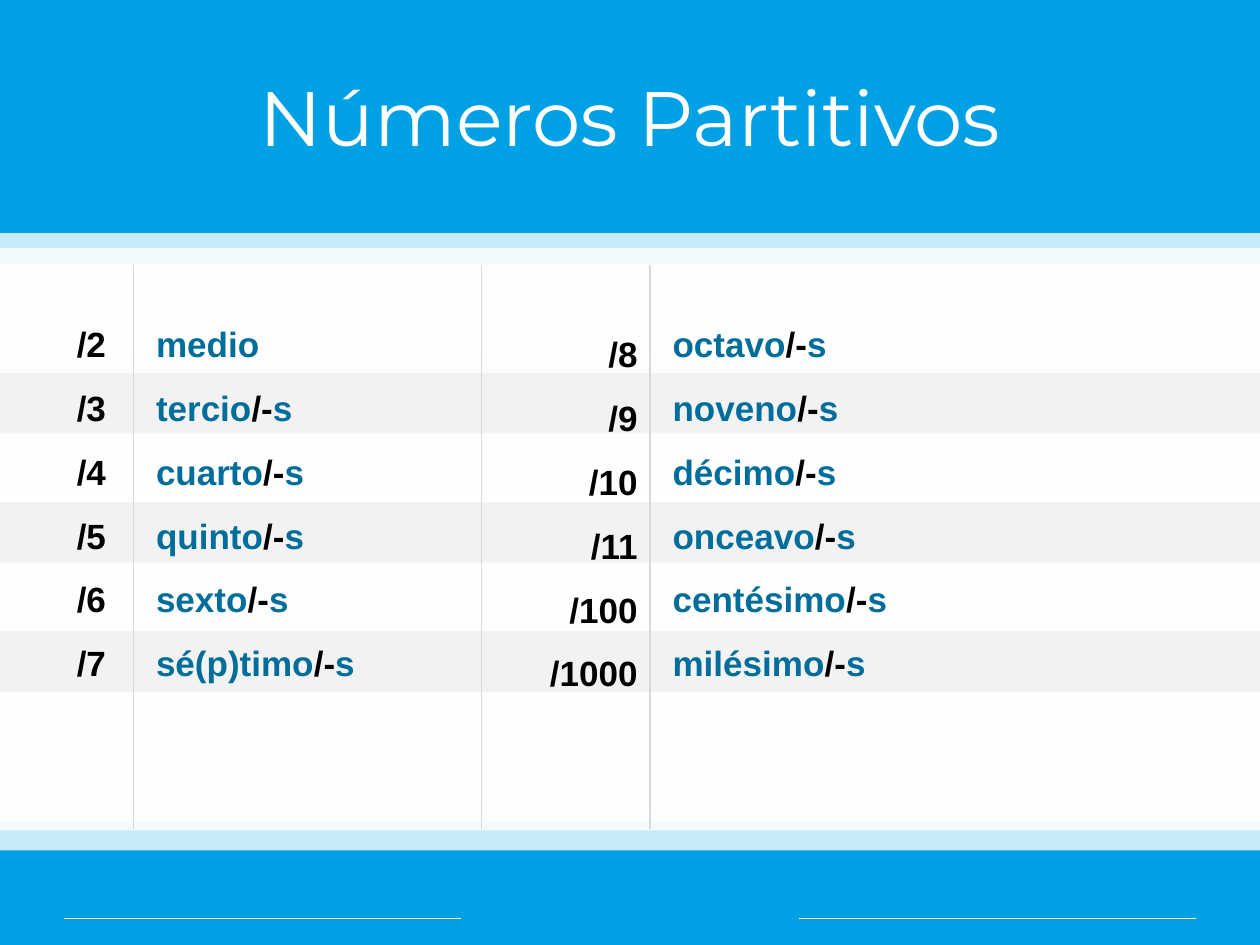
from pptx import Presentation
from pptx.dml.color import RGBColor
from pptx.enum.shapes import MSO_CONNECTOR as CONN, MSO_SHAPE as SHAPE
from pptx.enum.text import MSO_ANCHOR as ANCHOR, PP_ALIGN as ALIGN
from pptx.oxml.ns import qn
from pptx.util import Inches, Pt
from lxml.etree import SubElement

COLORS = {"blue": "00A1E4", "white": "FFFFFF", "stripe": "F2F2F2",
          "rule": "D9D9D9", "word": "006D9B", "black": "000000"}
WIDTH, HEIGHT = 10, 7.5

# Top and height of the translucent bands that fade into the blue
BANDS = [(2.09, 0.71), (1.97, 0.71), (1.85, 0.51), (2.95, 3.58), (2.1, 4.09),
         (2.53, 3.38), (5.83, 0.92), (5.67, 0.92), (2.2, 4.18)]

LEFT_WORDS = ["medio", "tercio", "cuarto", "quinto", "sexto", "sé(p)timo"]
RIGHT_WORDS = ["octavo", "noveno", "décimo", "onceavo", "centésimo", "milésimo"]
LEFT_NUMBERS = [2, 3, 4, 5, 6, 7]
RIGHT_NUMBERS = [8, 9, 10, 11, 100, 1000]


def rgb(name):
    return RGBColor.from_string(COLORS[name])


def set_font(font, color, **values):
    font.color.rgb = rgb(color)
    for name, value in values.items():
        setattr(font, name, value)


def add_rect(s, box, color, opacity=100):
    sp = s.shapes.add_shape(SHAPE.RECTANGLE, *map(Inches, box))
    sp.shadow.inherit = False
    sp.fill.solid()
    sp.fill.fore_color.rgb = rgb(color)
    sp.line.fill.background()
    if opacity < 100:
        clr = sp._element.spPr.find(".//" + qn("a:srgbClr"))
        SubElement(clr, qn("a:alpha")).set("val", str(opacity * 1000))


def add_line(s, start, end, color, width):
    line = s.shapes.add_connector(CONN.STRAIGHT, *map(Inches, start + end))
    line.line.color.rgb = rgb(color)
    line.line.width = Pt(width)
    SubElement(line._element.spPr, qn("a:effectLst"))


def add_backdrop(s, box):
    x, y, w, h = box
    footer_h = 0.52
    footer_y = y + h - footer_h
    add_rect(s, box, "blue")
    # Footer with a line broken in the middle
    add_rect(s, (x, footer_y, w, footer_h), "blue")
    add_line(s, (x + 0.51, 7.29), (x + w - 0.51, 7.29), "white", 0.25)
    add_rect(s, (x + 3.66, footer_y, 2.68, footer_h), "blue")
    for top, height in BANDS:
        add_rect(s, (x, top, w, height), "white", 78)


def add_title(s, box, text):
    title = s.shapes.title
    # Bring the title in front of the backdrop
    s.shapes._spTree.append(title._element)
    title.left, title.top, title.width, title.height = map(Inches, box)
    tf = title.text_frame
    tf.vertical_anchor = ANCHOR.MIDDLE
    p = tf.paragraphs[0]
    p.alignment = ALIGN.CENTER
    r = p.add_run()
    r.text = text
    set_font(r.font, "white", size=Pt(44), name="Montserrat")


def add_column(s, box, rows, align):
    """Each row is a list of (text, color) runs."""
    tf = s.shapes.add_textbox(*map(Inches, box)).text_frame
    tf.word_wrap = True
    for i, row in enumerate(rows):
        p = tf.add_paragraph() if i else tf.paragraphs[0]
        p.alignment = align
        p.line_spacing = 1.3
        p.space_before = Pt(5.3 if i else 0)
        for text, color in row:
            r = p.add_run()
            r.text = text
            set_font(r.font, color, size=Pt(20), name="Arial", bold=True)


def number_rows(numbers):
    return [[(f"/{n}", "black")] for n in numbers]


def word_rows(words):
    plural = [("/-", "black"), ("s", "word")]
    return [[(w, "word")] + (plural if w != "medio" else []) for w in words]


def add_fractions(s, box):
    x, y, w, h = box
    # Stripes behind every second row
    for i in range(3):
        add_rect(s, (x, y + 0.86 + i * 1.025, w, 0.48), "stripe")
    # Column rules
    for rule_x in (1.06, 3.82, 5.16):
        add_line(s, (x + rule_x, y), (x + rule_x, y + h), "rule", 0.75)
    # Numbers and words, in two pairs of columns
    top = y + 0.31
    add_column(s, (x, top, 0.94, 3.06), number_rows(LEFT_NUMBERS), ALIGN.RIGHT)
    add_column(s, (x + 1.14, top, 2.76, 3.06), word_rows(LEFT_WORDS), ALIGN.LEFT)
    add_column(s, (x + 3.9, top + 0.08, 1.26, 3.57), number_rows(RIGHT_NUMBERS),
               ALIGN.RIGHT)
    add_column(s, (x + 5.24, top, 4.57, 3.06), word_rows(RIGHT_WORDS), ALIGN.LEFT)


def main():
    prs = Presentation()
    prs.slide_width, prs.slide_height = Inches(WIDTH), Inches(HEIGHT)
    s = prs.slides.add_slide(prs.slide_layouts[5])
    add_backdrop(s, (0, 0, WIDTH, HEIGHT))
    add_title(s, (0.2, 0.21, 9.61, 1.42), "Números Partitivos")
    add_fractions(s, (0, 2.1, WIDTH, 4.48))
    prs.save("out.pptx")


if __name__ == "__main__":
    main()
